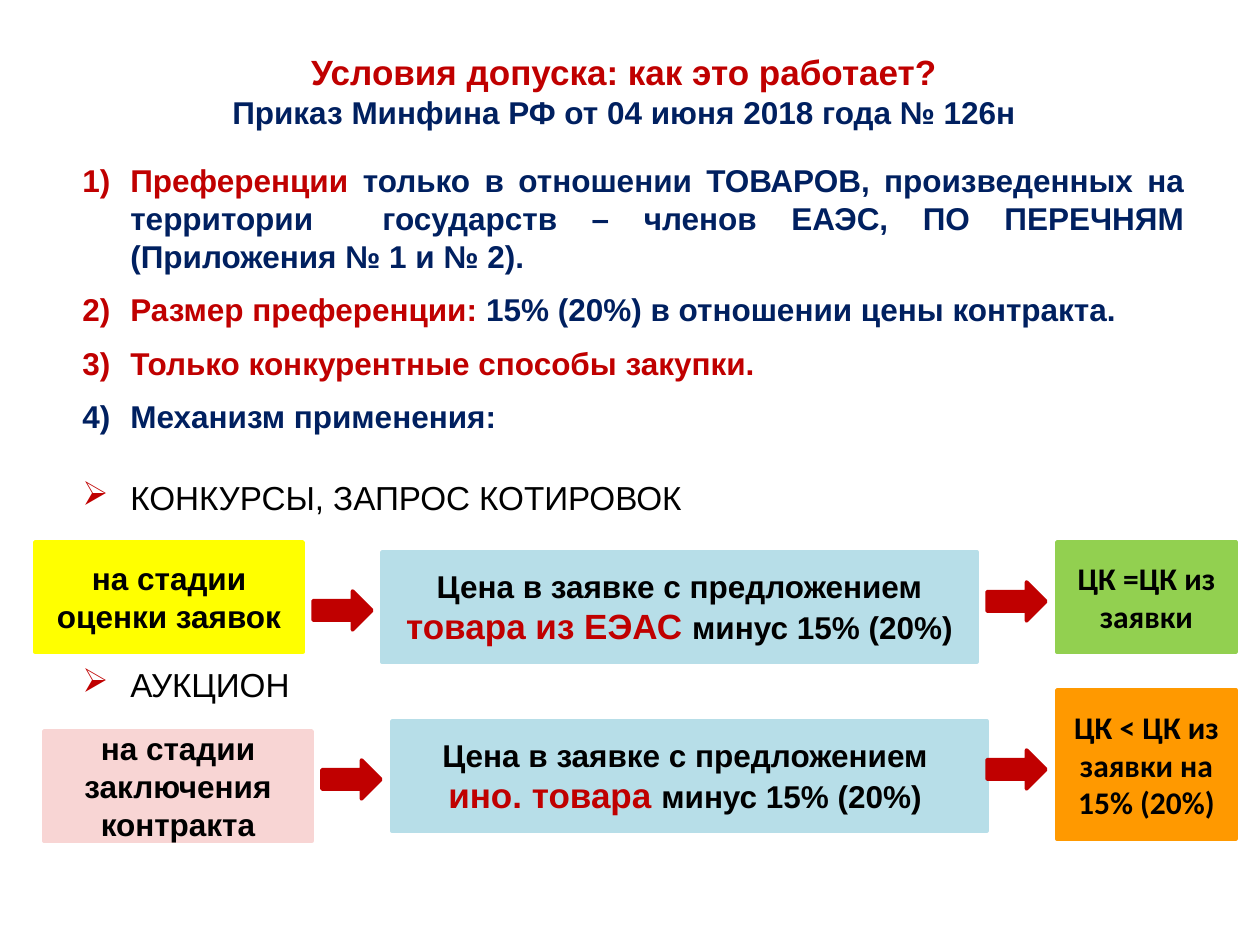
from dataclasses import dataclass

from lxml.etree import SubElement
from pptx import Presentation
from pptx.dml.color import RGBColor
from pptx.enum.shapes import MSO_SHAPE as Shape
from pptx.enum.text import MSO_ANCHOR as Anchor, PP_ALIGN as Align
from pptx.oxml.ns import qn
from pptx.util import Emu, Pt

PX = 914400 / 126


@dataclass(frozen=True)
class Theme:
    red: str = "C00000"
    navy: str = "002060"
    black: str = "000000"
    white: str = "FFFFFF"
    price: str = "B7DEE8"
    evaluation: str = "FFFF00"
    contract: str = "F8D5D4"
    same_price: str = "92D050"
    lower_price: str = "FF9900"
    heading: int = 20
    method: int = 19
    body: int = 18
    border: int = 2
    sans: str = "Arial"
    result: str = "Calibri"


def px(*lengths):
    return [Emu(round(length * PX)) for length in lengths]


def apply(target, values):
    for name, value in values.items():
        setattr(target, name, value)


class SlideBuilder:
    def __init__(self, slide, theme):
        self.slide = slide
        self.theme = theme

    def add_runs(self, paragraph, runs, font=None, bold=True, **layout):
        apply(paragraph, layout)
        for text, size, color in runs:
            run = paragraph.add_run()
            run.text = text
            apply(run.font, {"name": font or self.theme.sans,
                             "size": Pt(size), "bold": bold})
            run.font.color.rgb = RGBColor.from_string(color)

    def frame(self, box, anchor):
        apply(box.text_frame, {"word_wrap": True, "vertical_anchor": anchor})
        return box.text_frame

    def fill_lines(self, frame, lines, font=None):
        for index, runs in enumerate(lines):
            paragraph = frame.add_paragraph() if index else frame.paragraphs[0]
            self.add_runs(paragraph, runs, font, alignment=Align.CENTER)

    def title(self, bounds, lines):
        heading = self.slide.shapes.add_textbox(*px(*bounds))
        heading.fill.solid()
        heading.fill.fore_color.rgb = RGBColor.from_string(self.theme.white)
        self.fill_lines(self.frame(heading, Anchor.MIDDLE), lines)

    def bullet(self, paragraph, symbol):
        margin, hanging = px(55, -48)
        properties = paragraph._p.get_or_add_pPr()
        properties.set("marL", str(margin))
        properties.set("indent", str(hanging))
        if symbol:
            color = SubElement(properties, qn("a:buClr"))
            SubElement(color, qn("a:srgbClr")).set("val", self.theme.red)
            SubElement(properties, qn("a:buChar")).set("char", symbol)
        else:
            SubElement(properties, qn("a:buAutoNum")).set("type", "arabicParenR")

    def outline(self, bounds, items):
        body = self.slide.shapes.add_textbox(*px(*bounds))
        frame = self.frame(body, Anchor.TOP)
        for index, (symbol, before, runs) in enumerate(items):
            paragraph = frame.add_paragraph() if index else frame.paragraphs[0]
            self.add_runs(paragraph, runs, bold=not symbol, alignment=Align.JUSTIFY,
                          space_before=Pt(before), space_after=Pt(3))
            self.bullet(paragraph, symbol)

    def block(self, bounds, color, preset=Shape.RECTANGLE):
        shape = self.slide.shapes.add_shape(preset, *px(*bounds))
        shape.shadow.inherit = False
        shape.fill.solid()
        for paint in (shape.fill.fore_color, shape.line.color):
            paint.rgb = RGBColor.from_string(color)
        shape.line.width = Pt(self.theme.border)
        return shape

    def step(self, bounds, color, lines, font=None):
        frame = self.frame(self.block(bounds, color), Anchor.MIDDLE)
        self.fill_lines(frame, lines, font)

    def arrow(self, left, top):
        self.block((left, top, 59, 39), self.theme.red, Shape.RIGHT_ARROW)


def main():
    deck = Presentation()
    deck.slide_width, deck.slide_height = px(1260, 945)
    theme = Theme()
    builder = SlideBuilder(deck.slides.add_slide(deck.slide_layouts[6]), theme)

    def red(text, size=theme.body):
        return text, size, theme.red

    def navy(text):
        return text, theme.body, theme.navy

    def black(text, size=theme.body):
        return text, size, theme.black

    builder.title((44, 26, 1160, 129), [
        [red("Условия допуска: как это работает?", theme.heading)],
        [navy("Приказ Минфина РФ от 04 июня 2018 года № 126н")],
    ])
    builder.outline((63, 155, 1134, 745), [
        (None, 6, [red("Преференции "),
                   navy("только в отношении ТОВАРОВ, произведенных на "
                        "территории  государств – членов ЕАЭС, ПО ПЕРЕЧНЯМ "
                        "(Приложения № 1 и № 2).")]),
        (None, 6, [red("Размер преференции:"),
                   navy(" 15% (20%) в отношении цены контракта.")]),
        (None, 6, [red("Только конкурентные способы закупки.")]),
        (None, 6, [navy("Механизм применения:")]),
        ("➢", 21, [black("КОНКУРСЫ, ЗАПРОС КОТИРОВОК", theme.method)]),
        ("➢", 81, [black("АУКЦИОН ", theme.method)]),
    ])

    offer = "Цена в заявке с предложением "
    procedures = [
        (35, 542, theme.evaluation, "на стадии оценки заявок", 591,
         382, 552, [[black(offer), red("товара из ЕЭАС ", theme.heading),
                     black("минус 15% (20%)")]],
         582, 542, 110, theme.same_price, "ЦК =ЦК из заявки"),
        (44, 731, theme.contract, "на стадии заключения контракта", 760,
         392, 721, [[black(offer)], [red("ино. товара ", theme.heading),
                                     black("минус 15% (20%) ")]],
         750, 690, 149, theme.lower_price, "ЦК < ЦК из заявки на 15% (20%)"),
    ]
    for (stage_left, stage_top, stage_color, stage, first_arrow,
         price_left, price_top, price, second_arrow,
         result_top, result_height, result_color, result) in procedures:
        builder.step((stage_left, stage_top, 268, 110), stage_color, [[black(stage)]])
        builder.arrow(stage_left + 278, first_arrow)
        builder.step((price_left, price_top, 595, 110), theme.price, price)
        builder.arrow(987, second_arrow)
        builder.step((1057, result_top, 179, result_height), result_color,
                     [[black(result)]], theme.result)

    deck.save("out.pptx")


if __name__ == "__main__":
    main()
